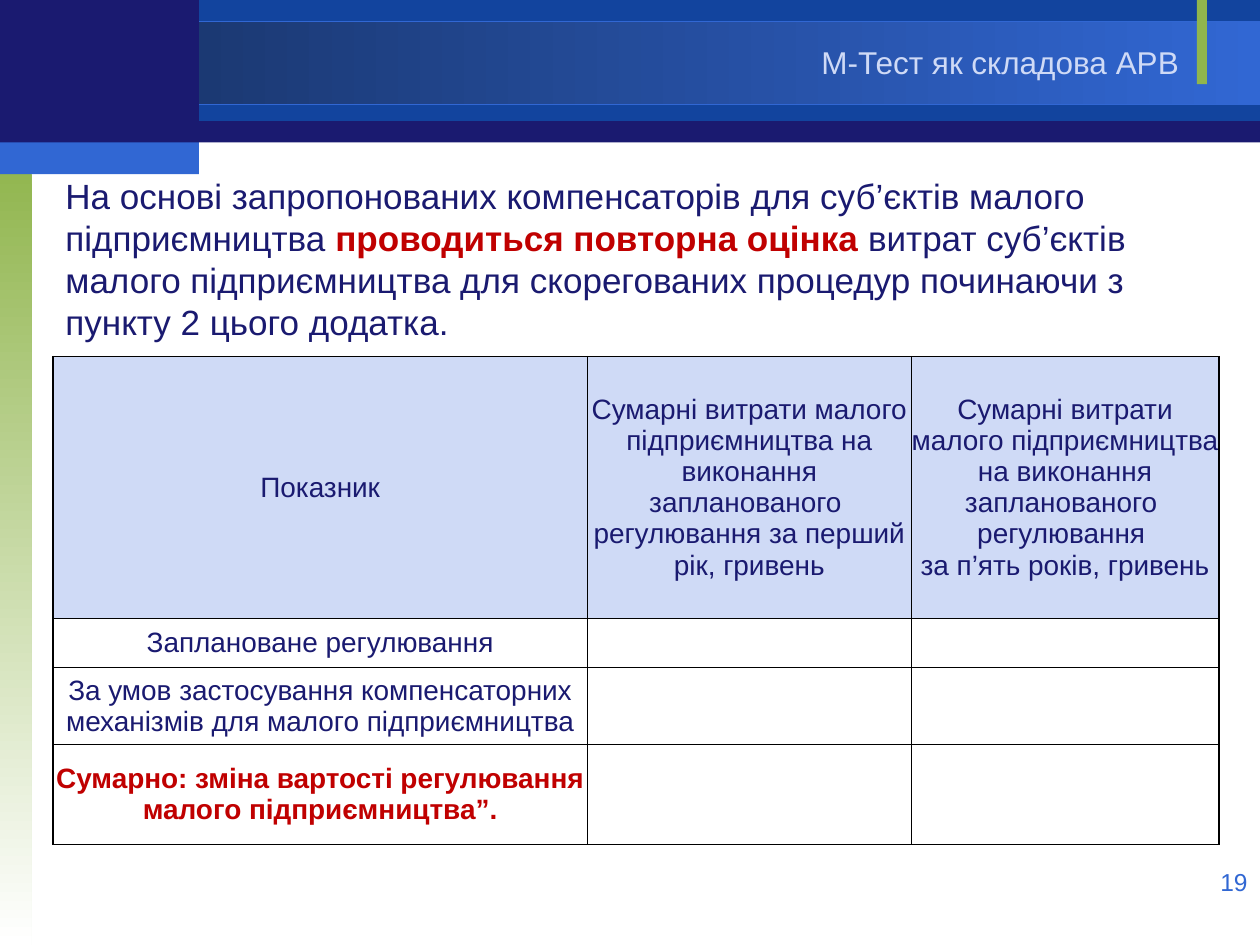
from lxml.etree import SubElement
from pptx import Presentation
from pptx.dml.color import RGBColor
from pptx.enum.text import MSO_ANCHOR, MSO_AUTO_SIZE, PP_ALIGN
from pptx.oxml.ns import qn
from pptx.util import Cm, Pt

HUES = {
    "navy": "1A1A70",
    "royal": "12449E",
    "dusk": "173061",
    "blue": "3167D3",
    "green": "90B54D",
    "pale": "CFDAF6",
    "red": "C00000",
    "white": "FFFFFF",
    "black": "000000",
}


def hue(name):
    return RGBColor.from_string(HUES[name])


class Deck:
    def __init__(self, wide, high):
        self.face = "Arial"
        self.show = Presentation()
        self.show.slide_width, self.show.slide_height = Cm(wide), Cm(high)
        self.slide = self.show.slides.add_slide(self.show.slide_layouts[6])

    def style(self, font, size, tint, bold=False):
        font.name, font.size, font.bold = self.face, Pt(size), bold
        font.color.rgb = hue(tint)

    def rect(self, box, tint, end=None, angle=0, line=None):
        shape = self.slide.shapes.add_shape(1, *map(Cm, box))
        shape.shadow.inherit = False
        if end:
            shape.fill.gradient()
            shape.fill.gradient_angle = angle
            stops = shape.fill.gradient_stops
            for stop, name, spot in zip(stops, (tint, end), (0, 1)):
                stop.color.rgb, stop.position = hue(name), spot
        else:
            shape.fill.solid()
            shape.fill.fore_color.rgb = hue(tint)
        if line:
            shape.line.color.rgb = hue(line)
            shape.line.width = Pt(0.75)
        else:
            shape.line.fill.background()

    def text(self, box, parts, size, align=PP_ALIGN.LEFT, wrap=True,
             grow=False, anchor=MSO_ANCHOR.TOP):
        frame = self.slide.shapes.add_textbox(*map(Cm, box)).text_frame
        frame.word_wrap, frame.vertical_anchor = wrap, anchor
        if grow:
            frame.auto_size = MSO_AUTO_SIZE.SHAPE_TO_FIT_TEXT
        para = frame.paragraphs[0]
        para.alignment = align
        if len(parts) == 1:
            para.text = parts[0][0]
            self.style(para.font, size, parts[0][1])
            return
        for words, tint, bold in parts:
            run = para.add_run()
            run.text = words
            self.style(run.font, size, tint, bold)

    def edge(self, cell):
        props = cell._tc.get_or_add_tcPr()
        for spot, side in enumerate(("lnL", "lnR", "lnT", "lnB")):
            line = SubElement(props, qn(f"a:{side}"), w=str(Pt(1)))
            fill = SubElement(line, qn("a:solidFill"))
            SubElement(fill, qn("a:srgbClr"), val=HUES["black"])
            props.insert(spot, line)

    def cell(self, cell, words, tint, bold, back):
        cell.margin_left = cell.margin_right = 0
        cell.margin_top = cell.margin_bottom = 0
        cell.vertical_anchor = MSO_ANCHOR.MIDDLE
        if back:
            cell.fill.solid()
            cell.fill.fore_color.rgb = hue(back)
        else:
            cell.fill.background()
        self.edge(cell)
        para = cell.text_frame.paragraphs[0]
        para.text = words
        para.alignment = PP_ALIGN.CENTER
        self.style(para.font, 16, tint, bold)

    def table(self, left, top, cols, rows, data):
        box = map(Cm, (left, top, sum(cols), sum(rows)))
        grid = self.slide.shapes.add_table(len(rows), len(cols), *box).table
        grid.first_row = grid.horz_banding = False
        for col, wide in zip(grid.columns, cols):
            col.width = Cm(wide)
        for row, high in zip(grid.rows, rows):
            row.height = Cm(high)
        last = len(rows) - 1
        for r, line in enumerate(data):
            for c, words in enumerate(line):
                self.cell(grid.cell(r, c), words,
                          "red" if r == last else "navy", r == last,
                          "pale" if r == 0 else None)

    def save(self):
        self.show.save("out.pptx")


def main():
    deck = Deck(25.4, 19.05)
    deck.rect((0, 0.03, 25.4, 2.84), "navy")
    deck.rect((4.01, 0, 21.39, 2.44), "royal")
    deck.rect((0, 0.43, 25.4, 1.68), "dusk", "blue", line="blue")
    deck.rect((0, 3.18, 0.64, 15.87), "green", "white", 270)
    deck.rect((24.13, 0, 0.2, 1.7), "green")
    deck.rect((0, 0, 4.01, 2.97), "navy")
    deck.rect((0, 2.87, 4.01, 0.64), "blue")

    deck.text((19.48, 17.35, 5.92, 1.32), [("19", "blue")], 14,
              PP_ALIGN.RIGHT)
    deck.text((1.07, 3.38, 22.66, 3.68), [
        ("На основі запропонованих компенсаторів для суб’єктів малого "
         "підприємництва ", "navy", False),
        ("проводиться повторна оцінка ", "red", True),
        ("витрат суб’єктів малого підприємництва для скорегованих процедур "
         "починаючи з пункту 2 цього додатка.", "navy", False),
    ], 20, grow=True, anchor=MSO_ANCHOR.MIDDLE)
    deck.text((16.31, 0.74, 7.8, 1.02), [("М-Тест як складова АРВ", "pale")],
              18, wrap=False, grow=True)

    costs = ("Сумарні витрати малого підприємництва на виконання "
             "запланованого  регулювання ")
    deck.table(1.07, 7.19, (10.77, 6.53, 6.2), (5.28, 0.99, 1.55, 2.01), [
        ("Показник", costs + "за перший рік, гривень",
         costs.rstrip() + " \nза п’ять років, гривень"),
        ("Заплановане регулювання", "", ""),
        ("За умов застосування компенсаторних механізмів для малого "
         "підприємництва", "", ""),
        ("Сумарно: зміна вартості регулювання малого підприємництва”.",
         "", ""),
    ])
    deck.save()


if __name__ == "__main__":
    main()
